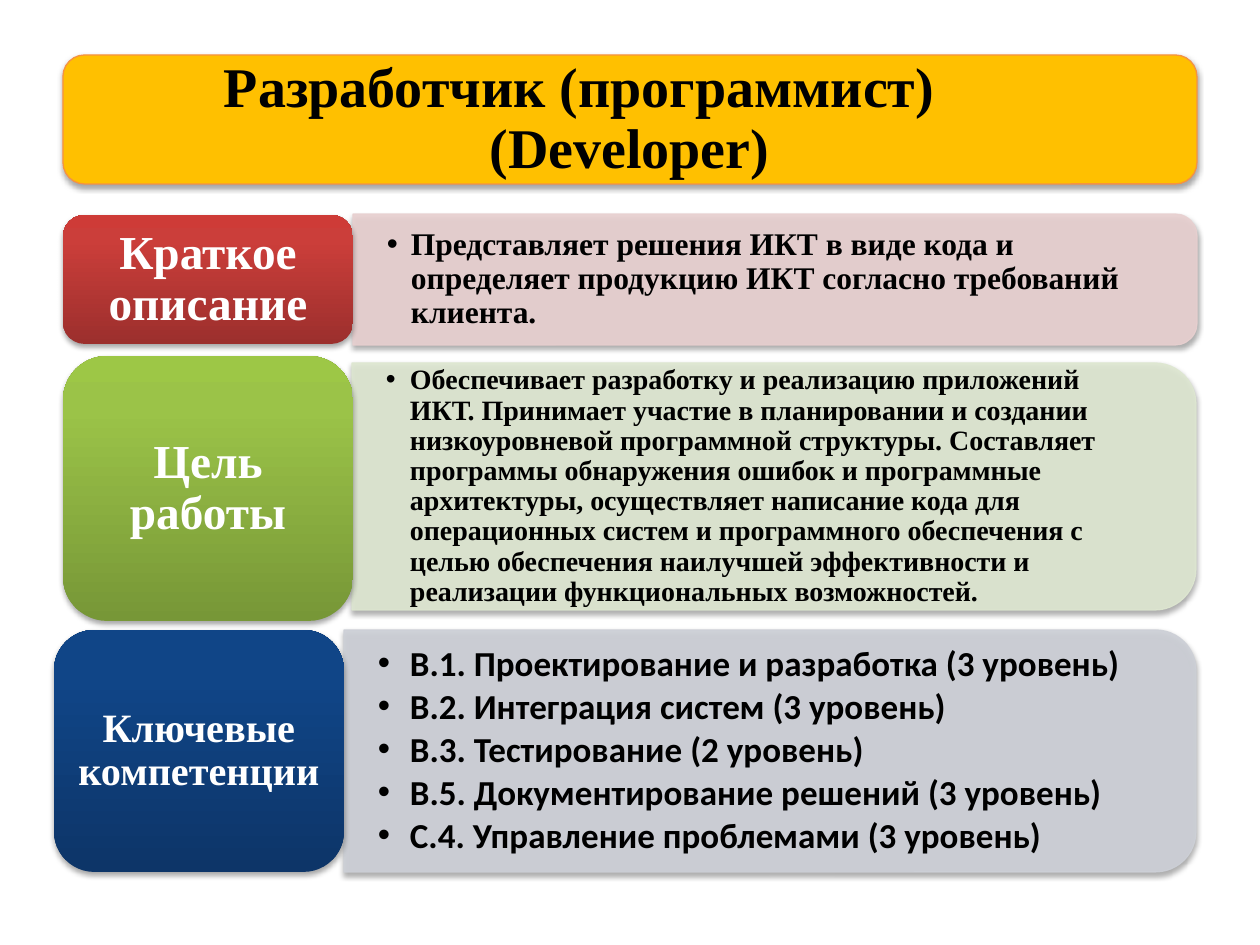
from pptx import Presentation
from pptx.dml.color import RGBColor
from pptx.enum.shapes import MSO_SHAPE as Shape
from pptx.enum.text import MSO_ANCHOR as Anchor, MSO_AUTO_SIZE as AutoSize, PP_ALIGN as Align
from pptx.oxml import parse_xml
from pptx.oxml.ns import nsdecls, qn
from pptx.util import Emu, Pt

PX = 914400 // 126
SERIF = "Times New Roman"
INSET_RATIO = 0.05  # part of a panel's height lost to its rounded corners
TITLE_SHIFT = 100  # the first title line is centred without this strip at the right

# label text, label size, label box, gradient (bottom, 80 %, top),
# panel box, panel colour, bullets, bullet size, bullet font, bullet indent
ROWS = [
    ("Краткое описание", 27, (63, 215, 290, 129), ("9C2F2D", "CB3E3A", "CE3B37"),
     (353, 214, 844, 131), "E8D0D0",
     ["Представляет решения ИКТ в виде кода и определяет продукцию ИКТ "
      "согласно требований клиента."], 18, SERIF, 24),
    ("Цель работы", 27, (63, 356, 290, 265), ("779737", "9BC348", "9DC746"),
     (352, 363, 844, 247), "DEE7D1",
     ["Обеспечивает разработку и реализацию приложений ИКТ. Принимает участие "
      "в планировании и создании низкоуровневой программной структуры. "
      "Составляет программы обнаружения ошибок и программные архитектуры, "
      "осуществляет написание кода для операционных систем и программного "
      "обеспечения с целью обеспечения наилучшей эффективности и реализации "
      "функциональных возможностей."], 16, SERIF, 24),
    ("Ключевые компетенции", 23, (54, 630, 290, 242), ("0D3568", "104587", "0E458A"),
     (344, 630, 852, 242), "CDD0D7",
     ["В.1. Проектирование и разработка (3 уровень)",
      "В.2. Интеграция систем (3 уровень)",
      "В.3. Тестирование (2 уровень)",
      "В.5. Документирование решений (3 уровень)",
      "С.4. Управление проблемами (3 уровень)"], 20, "Calibri", 32),
]


def px(n):
    return Emu(round(n * PX))


def rgb(color):
    return RGBColor.from_string(color)


def add_shadow(sp):
    sp.shadow.inherit = False
    effects = sp._element.spPr.find(qn("a:effectLst"))
    effects.append(parse_xml(
        f'<a:outerShdw {nsdecls("a")} blurRad="40000" dist="23000" dir="5400000" '
        'rotWithShape="0"><a:srgbClr val="000000"><a:alpha val="35000"/>'
        '</a:srgbClr></a:outerShdw>'))


def add_block(s, kind, box, fill=None, line=None):
    sp = s.shapes.add_shape(kind, *map(px, box))
    if fill:
        sp.fill.solid()
        sp.fill.fore_color.rgb = rgb(fill)
    if line:
        sp.line.color.rgb = rgb(line)
        sp.line.width = Pt(0.75)
    else:
        sp.line.fill.background()
    add_shadow(sp)
    return sp


def set_gradient(sp, colors):
    sp.fill.gradient()
    sp.fill.gradient_angle = 90
    stops = sp._element.spPr.find(qn("a:gradFill")).find(qn("a:gsLst"))
    stops.clear()
    for pos, color in zip((0, 80000, 100000), colors):
        stops.append(parse_xml(f'<a:gs {nsdecls("a")} pos="{pos}">'
                               f'<a:srgbClr val="{color}"/></a:gs>'))


def set_bullet(p, indent):
    p.level = 1
    pPr = p._p.get_or_add_pPr()
    pPr.set("marL", str(px(indent)))
    pPr.set("indent", str(-px(indent)))
    pPr.append(parse_xml(f'<a:buFont {nsdecls("a")} typeface="Arial"/>'))
    pPr.append(parse_xml(f'<a:buChar {nsdecls("a")} char="•"/>'))


def write(tf, lines, size, color, font=SERIF, align=Align.CENTER, inset=(10, 8), gap=0):
    dx, dy = map(px, inset)
    frame = dict(word_wrap=True, auto_size=AutoSize.NONE, vertical_anchor=Anchor.MIDDLE,
                 margin_left=dx, margin_right=dx, margin_top=dy, margin_bottom=dy)
    for name, value in frame.items():
        setattr(tf, name, value)
    para = dict(alignment=align, line_spacing=0.9, space_before=Pt(0), space_after=Pt(gap))
    for i, text in enumerate(lines):
        p = tf.add_paragraph() if i else tf.paragraphs[0]
        for name, value in para.items():
            setattr(p, name, value)
        r = p.add_run()
        r.text = text
        for name, value in dict(name=font, size=Pt(size), bold=True).items():
            setattr(r.font, name, value)
        r.font.color.rgb = rgb(color)


def add_title(s):
    add_block(s, Shape.ROUNDED_RECTANGLE, (63, 55, 1134, 129), "FFC000", "F69240")
    title = s.shapes.title
    title.left, title.top, title.width, title.height = map(px, (69, 62, 1121, 116))
    tf = title.text_frame
    write(tf, ["Разработчик (программист)", "(Developer)"], 32, "000000", inset=(16, 16))
    # The first line sits left of the centre, the second is indented back to it
    tf.margin_right = px(16 + TITLE_SHIFT)
    tf.paragraphs[1]._p.get_or_add_pPr().set("marL", str(px(TITLE_SHIFT)))
    s.shapes._spTree.append(title._element)  # in front of its card


def add_panel(s, box, color, lines, size, font, indent):
    x, y, w, h = box
    # Drawn upright about the same centre, then turned
    sp = add_block(s, Shape.ROUND_2_SAME_RECTANGLE,
                   (x + (w - h) / 2, y + (h - w) / 2, h, w), color, color)
    sp.rotation = 90
    for clr in sp._element.spPr.iter(qn("a:srgbClr")):
        if clr.get("val") == color:
            clr.append(parse_xml(f'<a:alpha {nsdecls("a")} val="90000"/>'))
    d = h * INSET_RATIO
    tb = s.shapes.add_textbox(*map(px, (x, y + d, w - d, h - 2 * d)))
    write(tb.text_frame, lines, size, "000000", font, Align.LEFT, (34, 18), gap=3)
    for p in tb.text_frame.paragraphs:
        set_bullet(p, indent)


def add_label(s, box, colors, text, size):
    sp = add_block(s, Shape.ROUNDED_RECTANGLE, box)
    set_gradient(sp, colors)
    write(sp.text_frame, [text], size, "FFFFFF")


def main():
    prs = Presentation()
    prs.slide_width, prs.slide_height = px(1260), px(945)
    s = prs.slides.add_slide(prs.slide_layouts[5])
    add_title(s)
    for text, size, label, colors, panel, color, lines, body_size, font, indent in ROWS:
        add_panel(s, panel, color, lines, body_size, font, indent)
        add_label(s, label, colors, text, size)
    prs.save("out.pptx")


if __name__ == "__main__":
    main()
